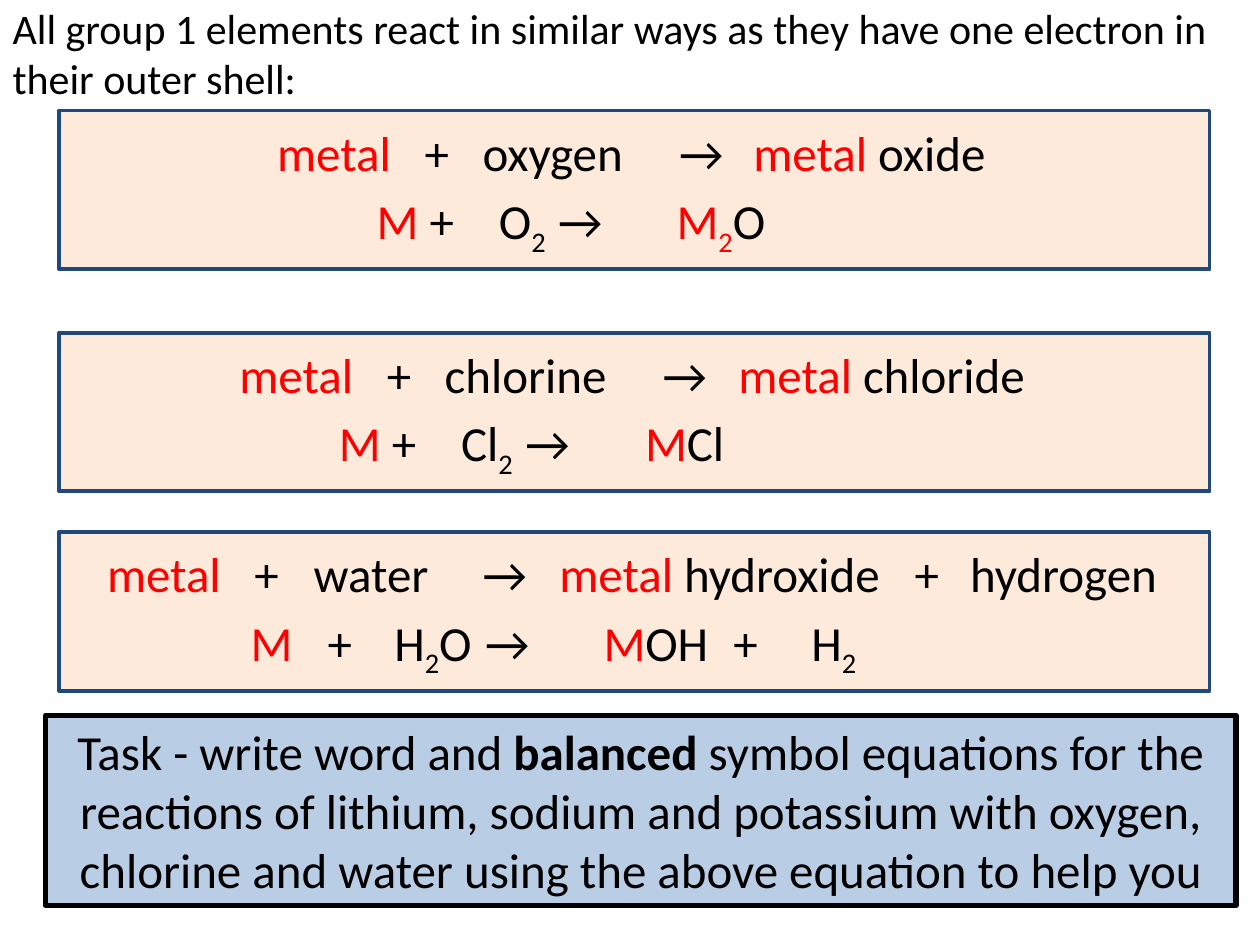
"""Build a slide of the general reactions of group 1 elements."""
from dataclasses import dataclass
from typing import NamedTuple

from lxml.etree import SubElement
from pptx import Presentation
from pptx.dml.color import RGBColor
from pptx.enum.shapes import MSO_SHAPE as Preset
from pptx.enum.text import MSO_ANCHOR as Anchor, PP_ALIGN as Align
from pptx.oxml.ns import qn
from pptx.util import Inches, Pt

BLACK = RGBColor(0x00, 0x00, 0x00)
RED = RGBColor(0xFF, 0x00, 0x00)
NAVY = RGBColor(0x1F, 0x49, 0x7D)
PEACH = RGBColor(0xFD, 0xEA, 0xDA)
PALE_BLUE = RGBColor(0xB9, 0xCD, 0xE5)

WIDTH, HEIGHT = Inches(10), Inches(7.5)
BODY_SIZE, INTRO_SIZE = 28, 24
LINE_GAP = Pt(0.2 * BODY_SIZE)
SUBSCRIPT = "-25000"

INTRO = ("All group 1 elements react in similar ways as they have "
         "one electron in their outer shell:")


class Piece(NamedTuple):
    text: str
    color: RGBColor = BLACK
    lowered: bool = False
    bold: bool = False


class Area(NamedTuple):
    """Shares of the slide's width and height."""
    left: float
    top: float
    width: float
    height: float


@dataclass(frozen=True)
class Term:
    stop: float
    pieces: tuple[Piece, ...]


@dataclass(frozen=True)
class Reaction:
    top: float
    words: tuple[Term, ...]
    symbols: tuple[Term, ...]


METAL, M = Piece("metal", RED), Piece("M", RED)
TWO, RED_TWO = Piece("2", lowered=True), Piece("2", RED, True)


def term(stop: float, *pieces: Piece | str) -> Term:
    """Make a term that starts at a tab stop in inches."""
    return Term(stop, tuple(Piece(item) if isinstance(item, str) else item
                            for item in pieces))


REACTIONS = (
    Reaction(0.117,
             (term(1.73, METAL), term(2.9, "+"), term(3.36, "oxygen"),
              term(4.92, "→"), term(5.51, METAL, " oxide")),
             (term(2.52, M), term(2.94, "+"), term(3.49, "O", TWO),
              term(3.96, "→"), term(4.9, M, RED_TWO, "O"))),
    Reaction(0.352,
             (term(1.43, METAL), term(2.6, "+"), term(3.06, "chlorine"),
              term(4.79, "→"), term(5.39, METAL, " chloride")),
             (term(2.22, M), term(2.64, "+"), term(3.19, "Cl", TWO),
              term(3.7, "→"), term(4.65, M, "Cl"))),
    Reaction(0.563,
             (term(0.38, METAL), term(1.55, "+"), term(2.02, "water"),
              term(3.36, "→"), term(3.97, METAL, " hydroxide"),
              term(6.79, "+"), term(7.23, "hydrogen")),
             (term(1.52, M), term(2.13, "+"), term(2.66, "H", TWO, "O"),
              term(3.38, "→"), term(4.32, M, "OH"),
              term(5.35, "+"), term(5.97, "H", TWO))),
)
TASK = (
    Piece("Task - write word and "),
    Piece("balanced", bold=True),
    Piece(" symbol equations for the reactions of lithium, sodium and "
          "potassium with oxygen, chlorine and water using the above "
          "equation to help you"),
)


def apply(target, values: dict) -> None:
    """Set each attribute of the target."""
    for name, value in values.items():
        setattr(target, name, value)


def place(area: Area) -> dict:
    """Turn shares of the slide into lengths."""
    return {"left": int(area.left * WIDTH), "top": int(area.top * HEIGHT),
            "width": int(area.width * WIDTH),
            "height": int(area.height * HEIGHT)}


def add_piece(paragraph, piece: Piece, size: float = BODY_SIZE) -> None:
    """Add one run of styled text."""
    run = paragraph.add_run()
    run.text = piece.text
    apply(run.font, {"name": "Calibri", "size": Pt(size), "bold": piece.bold})
    run.font.color.rgb = piece.color
    if piece.lowered:
        run.font._element.set("baseline", SUBSCRIPT)


def add_box(slide, area: Area, fill: RGBColor, line: RGBColor, weight: float):
    """Add a framed rectangle and return it."""
    shape = slide.shapes.add_shape(Preset.RECTANGLE, **place(area))
    shape.shadow.inherit = False
    shape.fill.solid()
    shape.fill.fore_color.rgb = fill
    shape.line.color.rgb = line
    shape.line.width = Pt(weight)
    shape.text_frame.word_wrap = True
    return shape


def write_equation(paragraph, terms: tuple[Term, ...]) -> None:
    """Write the terms of an equation at their tab stops."""
    apply(paragraph, {"alignment": Align.LEFT, "space_before": LINE_GAP})
    tabs = SubElement(paragraph._p.get_or_add_pPr(), qn("a:tabLst"))
    for item in terms:
        SubElement(tabs, qn("a:tab"), pos=str(Inches(item.stop)), algn="l")
        first, *rest = item.pieces
        for piece in (first._replace(text="\t" + first.text), *rest):
            add_piece(paragraph, piece)


def add_reaction(slide, reaction: Reaction) -> None:
    """Draw one reaction as a word and a symbol equation."""
    area = Area(0.047, reaction.top, 0.913, 0.168)
    frame = add_box(slide, area, PEACH, NAVY, 2.25).text_frame
    apply(frame, {"vertical_anchor": Anchor.MIDDLE,
                  "margin_left": 0, "margin_right": 0})
    write_equation(frame.paragraphs[0], reaction.words)
    write_equation(frame.add_paragraph(), reaction.symbols)


def add_task(slide) -> None:
    """Draw the task panel."""
    area = Area(0.036, 0.757, 0.945, 0.201)
    frame = add_box(slide, area, PALE_BLUE, BLACK, 3).text_frame
    frame.vertical_anchor = Anchor.TOP
    paragraph = frame.paragraphs[0]
    paragraph.alignment = Align.CENTER
    for piece in TASK:
        add_piece(paragraph, piece)


def write_intro(title) -> None:
    """Move the title to the top and fill it."""
    apply(title, place(Area(0, -0.004, 1, 0.121)))
    apply(title.text_frame, {"word_wrap": True, "vertical_anchor": Anchor.TOP})
    paragraph = title.text_frame.paragraphs[0]
    paragraph.alignment = Align.LEFT
    add_piece(paragraph, Piece(INTRO), INTRO_SIZE)


def main() -> None:
    """Build and save the presentation."""
    presentation = Presentation()
    apply(presentation, {"slide_width": WIDTH, "slide_height": HEIGHT})
    layout = presentation.slide_layouts.get_by_name("Title Only")
    slide = presentation.slides.add_slide(layout)
    write_intro(slide.shapes.title)
    for reaction in REACTIONS:
        add_reaction(slide, reaction)
    add_task(slide)
    presentation.save("out.pptx")


if __name__ == "__main__":
    main()
